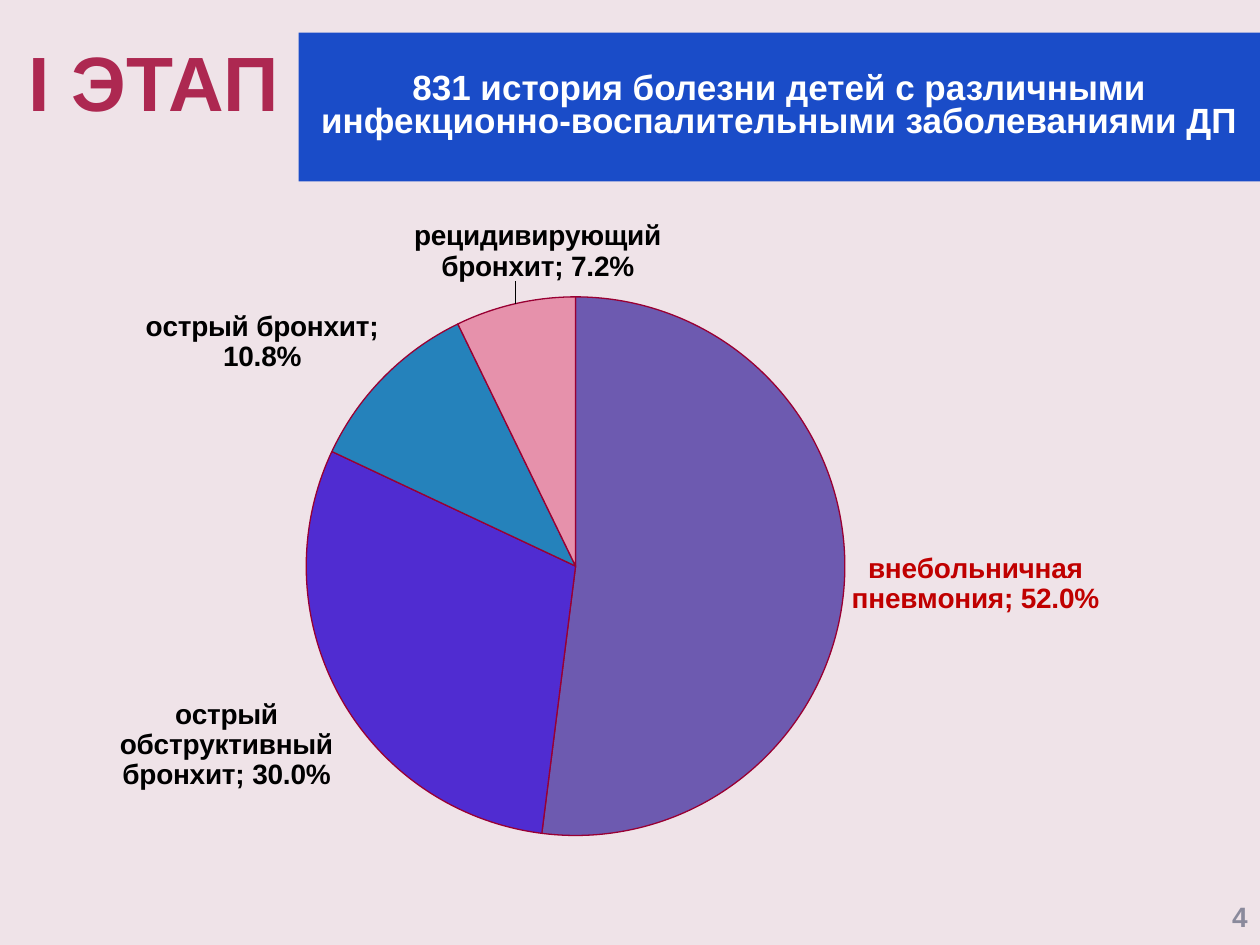
from lxml import etree
from pptx import Presentation, util as u
from pptx.chart.data import CategoryChartData
from pptx.dml.color import RGBColor
from pptx.enum import chart as ch, shapes, text
from pptx.oxml import parse_xml
from pptx.oxml.ns import nsdecls, qn

W, H = 10, 7.5
HUE = {"back": "EFE3E8", "title": "AD2851", "band": "1A4CC8", "white": "FFFFFF",
       "page": "8A8A9C", "edge": "990033", "label": "000000", "accent": "C00000"}
PIE = [("внебольничная пневмония", 0.52, "6D5AB0"),
       ("острый обструктивный бронхит", 0.3, "502CD1"),
       ("острый бронхит", 0.108, "2582BB"),
       ("рецидивирующий бронхит", 0.072, "E691AB")]


def rgb(name):
    return RGBColor.from_string(HUE.get(name, name))


def style(font, size, hue):
    for key, val in {"name": "Arial", "size": u.Pt(size), "bold": True}.items():
        setattr(font, key, val)
    font.color.rgb = rgb(hue)


def place(shape, box):
    for key, val in zip(("left", "top", "width", "height"), box):
        setattr(shape, key, u.Inches(val))


def write(shape, words, size, hue, align, after=0, pad=(0.1, 0.05)):
    frame = shape.text_frame
    form = {"word_wrap": True, "vertical_anchor": text.MSO_ANCHOR.MIDDLE,
            "margin_left": u.Inches(pad[0]), "margin_right": u.Inches(pad[0]),
            "margin_top": u.Inches(pad[1]), "margin_bottom": u.Inches(pad[1])}
    for key, val in form.items():
        setattr(frame, key, val)
    para = frame.paragraphs[0]
    for key, val in {"alignment": align, "line_spacing": 0.8,
                     "space_before": u.Pt(0), "space_after": u.Pt(after)}.items():
        setattr(para, key, val)
    run = para.add_run()
    run.text = words
    style(run.font, size, hue)


def layout(xml, **vals):
    """Make a manual layout from its settings."""
    node = parse_xml(f"<c:layout {nsdecls('c')}><c:manualLayout/></c:layout>")
    for key, val in vals.items():
        etree.SubElement(node[0], qn(f"c:{key}")).set("val", str(val))
    for old in xml.findall(qn("c:layout")):
        xml.remove(old)
    return node


def head(slide, box):
    # Title, with a blue band over its right part
    x, y, w, h = box
    title = slide.shapes.title
    place(title, (0.13, 0.21, 9.75, 1))
    write(title, "I ЭТАП", 44, "title", text.PP_ALIGN.LEFT, 6)
    band = slide.shapes.add_shape(shapes.MSO_SHAPE.RECTANGLE, 0, 0, 0, 0)
    place(band, (x, y, w, h))
    band.shadow.inherit = False
    band.fill.solid()
    band.fill.fore_color.rgb = rgb("band")
    band.line.fill.background()
    write(band, "831 история болезни детей с различными "
          "инфекционно-воспалительными заболеваниями ДП",
          20, "white", text.PP_ALIGN.CENTER, pad=(0.02, 0.01))


def mark(labels, hue):
    """Format a set of labels, or the label of one slice."""
    style(labels.font, 16, hue)
    labels.position = ch.XL_LABEL_POSITION.OUTSIDE_END


def join(node):
    """Show category and value, with a semicolon between them."""
    node.find(qn("c:showCatName")).set("val", "1")
    node.find(qn("c:showVal")).set("val", "1")
    for key in ("c:showPercent", "c:showLegendKey", "c:showSerName"):
        node.find(qn(key)).set("val", "0")
    mark_xml = parse_xml(f"<c:separator {nsdecls('c')}>; </c:separator>")
    prior = node.find(qn("c:showBubbleSize"))
    if prior is None:
        prior = node.find(qn("c:showPercent"))
    prior.addnext(mark_xml)


def pie(slide, box):
    data = CategoryChartData(number_format="0.0%")
    data.categories = [name for name, _, _ in PIE]
    data.add_series("Series 1", [val for _, val, _ in PIE])
    frame = slide.shapes.add_chart(ch.XL_CHART_TYPE.PIE,
                                   *[u.Inches(v) for v in box], data)
    chart = frame.chart
    chart.has_legend = chart.has_title = False
    style(chart.font, 16, "label")
    plot = chart.plots[0]
    plot.vary_by_categories = True
    area = plot._element.getparent()
    area.insert(0, layout(area, layoutTarget="inner", xMode="edge", yMode="edge",
                          x=0.106, y=0.152, w=0.584, h=0.709))
    # Slices
    series = plot.series[0]
    for i, (_, _, hue) in enumerate(PIE):
        point = series.points[i].format
        point.fill.solid()
        point.fill.fore_color.rgb = rgb(hue)
        point.line.color.rgb = rgb("edge")
        point.line.width = u.Pt(0.75)
    # Labels: the first is red, the last is moved off its slice
    labels = series.data_labels
    labels.number_format, labels.number_format_is_linked = "0.0%", False
    mark(labels, "label")
    for i, hue in ((0, "accent"), (len(PIE) - 1, "label")):
        mark(series.points[i].data_label, hue)
    nodes = labels._element.findall(qn("c:dLbl"))
    for node in [labels._element, *nodes]:
        join(node)
    for node in nodes:
        node.find(qn("c:idx")).addnext(parse_xml(
            f'<c:numFmt {nsdecls("c")} formatCode="0.0%" sourceLinked="0"/>'))
    last = nodes[-1]
    last.find(qn("c:idx")).addnext(layout(last, x=0.1, y=-0.02))


def foot(slide, box):
    # Page number
    page = slide.shapes.add_textbox(0, 0, 0, 0)
    place(page, box)
    write(page, "4", 16, "page", text.PP_ALIGN.RIGHT, 6)


def main():
    deck = Presentation()
    deck.slide_width, deck.slide_height = u.Inches(W), u.Inches(H)
    slide = deck.slides.add_slide(deck.slide_layouts[5])
    slide.background.fill.solid()
    slide.background.fill.fore_color.rgb = rgb("back")
    head(slide, (2.37, 0.26, W - 2.37, 1.18))
    pie(slide, (-0.1, 1.44, 11.73, 6.03))
    foot(slide, (W - 2.25, H - 0.4, 2.25, 0.4))
    deck.save("out.pptx")


if __name__ == "__main__":
    main()
